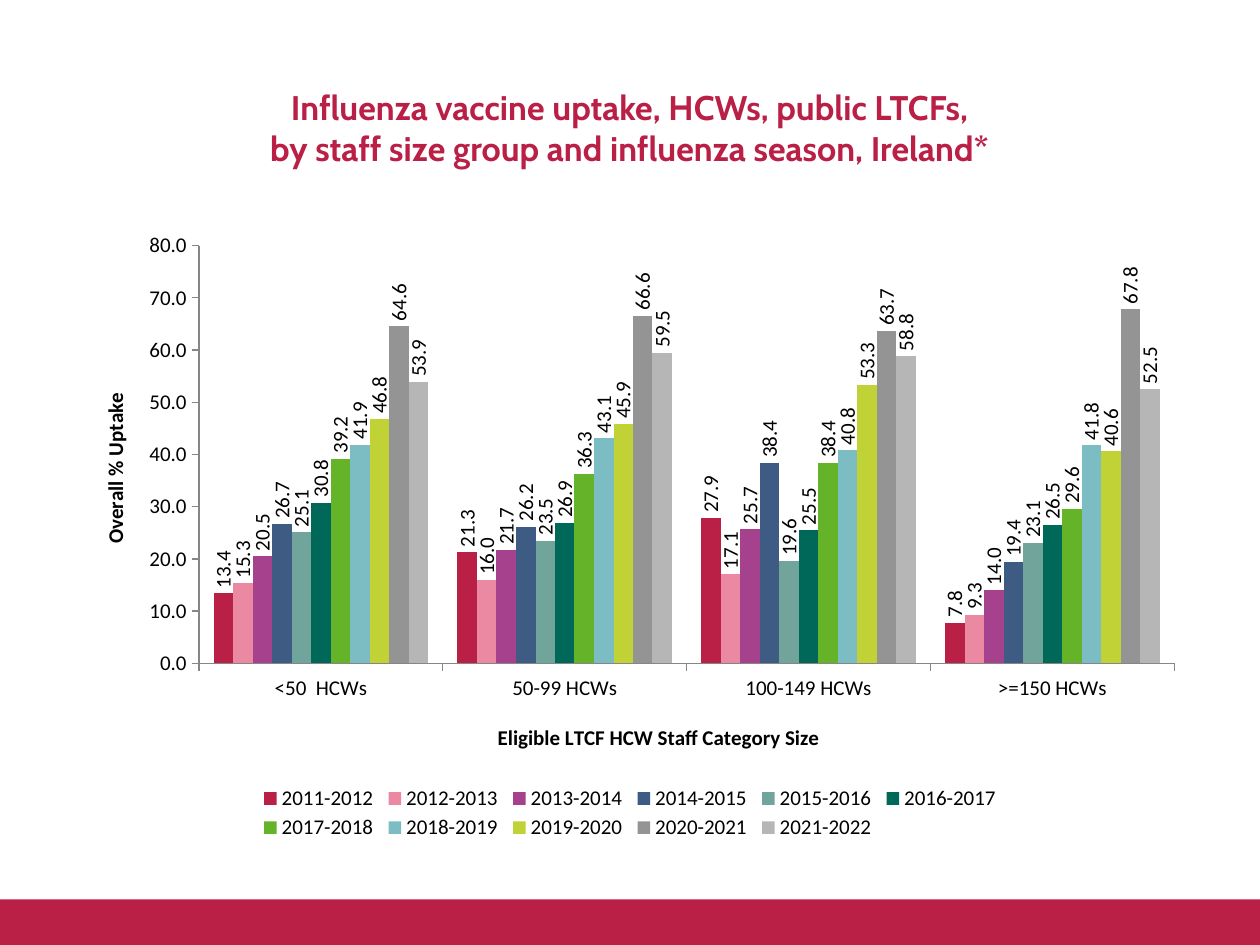
from lxml import etree
from pptx import Presentation
from pptx.chart.data import CategoryChartData
from pptx.dml.color import RGBColor
from pptx.enum.chart import XL_CHART_TYPE, XL_LABEL_POSITION, XL_LEGEND_POSITION, XL_TICK_MARK
from pptx.enum.shapes import MSO_SHAPE
from pptx.enum.text import MSO_ANCHOR, PP_ALIGN
from pptx.oxml.ns import qn
from pptx.util import Cm, Pt

COLUMNS = XL_CHART_TYPE.COLUMN_CLUSTERED
OUTSIDE_END = XL_LABEL_POSITION.OUTSIDE_END
BOTTOM = XL_LEGEND_POSITION.BOTTOM
TICK_OUT = XL_TICK_MARK.OUTSIDE
RECTANGLE = MSO_SHAPE.RECTANGLE
MIDDLE = MSO_ANCHOR.MIDDLE
CENTER = PP_ALIGN.CENTER

CRIMSON = RGBColor(0xBA, 0x1F, 0x46)
BLACK = RGBColor(0, 0, 0)
AXIS_GREY = RGBColor(0x86, 0x86, 0x86)

HEADLINE = [
    "Influenza vaccine uptake, HCWs, public LTCFs,",
    "by staff size group and influenza season, Ireland*",
]
STAFF_SIZES = ["<50  HCWs", "50-99 HCWs", "100-149 HCWs", ">=150 HCWs"]
SEASONS = [
    ("2011-2012", CRIMSON, (13.4, 21.3, 27.9, 7.8)),
    ("2012-2013", RGBColor(0xEB, 0x89, 0xA3), (15.3, 16.0, 17.1, 9.3)),
    ("2013-2014", RGBColor(0xA6, 0x42, 0x8D), (20.5, 21.7, 25.7, 14.0)),
    ("2014-2015", RGBColor(0x3E, 0x5B, 0x84), (26.7, 26.2, 38.4, 19.4)),
    ("2015-2016", RGBColor(0x71, 0xA5, 0x9C), (25.1, 23.5, 19.6, 23.1)),
    ("2016-2017", RGBColor(0x00, 0x68, 0x58), (30.8, 26.9, 25.5, 26.5)),
    ("2017-2018", RGBColor(0x65, 0xB3, 0x28), (39.2, 36.3, 38.4, 29.6)),
    ("2018-2019", RGBColor(0x7C, 0xBD, 0xC4), (41.9, 43.1, 40.8, 41.8)),
    ("2019-2020", RGBColor(0xC0, 0xD2, 0x36), (46.8, 45.9, 53.3, 40.6)),
    ("2020-2021", RGBColor(0x94, 0x94, 0x94), (64.6, 66.6, 63.7, 67.8)),
    ("2021-2022", RGBColor(0xB6, 0xB6, 0xB6), (53.9, 59.5, 58.8, 52.5)),
]


def write_text(frame, lines, font="Calibri", size=12, color=BLACK, bold=True):
    for index, line in enumerate(lines):
        paragraph = frame.add_paragraph() if index else frame.paragraphs[0]
        paragraph.alignment = CENTER
        run = paragraph.add_run()
        run.text = line
        run.font.name, run.font.size = font, Pt(size)
        run.font.bold, run.font.color.rgb = bold, color


def place(element, after, inner=False, **fractions):
    for old in element.findall(qn("c:layout")):
        element.remove(old)
    layout = etree.Element(qn("c:layout"))
    manual = etree.SubElement(layout, qn("c:manualLayout"))
    settings = {"layoutTarget": "inner"} if inner else {}
    settings.update(xMode="edge", yMode="edge", **fractions)
    for key, value in settings.items():
        etree.SubElement(manual, qn(f"c:{key}")).set("val", str(value))
    if after:
        element.find(qn(after)).addnext(layout)
    else:
        element.insert(0, layout)


def style_axis(axis, title, x, y):
    axis.has_major_gridlines = False
    axis.major_tick_mark = TICK_OUT
    axis.format.line.color.rgb = AXIS_GREY
    axis.format.line.width = Pt(0.75)
    write_text(axis.axis_title.text_frame, [title])
    place(axis.axis_title._element, "c:tx", x=x, y=y)


def add_uptake_chart(slide):
    data = CategoryChartData(number_format="0.0")
    data.categories = STAFF_SIZES
    for season, _, uptake in SEASONS:
        data.add_series(season, uptake)
    chart = slide.shapes.add_chart(
        COLUMNS, Cm(1.27), Cm(4.45), Cm(22.86), Cm(12.57), data).chart
    chart.has_title = False
    chart.font.name, chart.font.size, chart.font.color.rgb = "Calibri", Pt(12), BLACK

    columns = chart.plots[0]
    columns.gap_width, columns.overlap, columns.vary_by_categories = 150, 0, False
    for series, (_, color, _) in zip(columns.series, SEASONS):
        series.format.fill.solid()
        series.format.fill.fore_color.rgb = color
        labels = series.data_labels
        labels.show_value, labels.position = True, OUTSIDE_END
        labels.number_format, labels.number_format_is_linked = "0.0", False
        labels.font.name, labels.font.size, labels.font.color.rgb = "Calibri", Pt(12), BLACK
        direction = labels._element.find(qn("c:txPr")).find(qn("a:bodyPr"))
        direction.set("rot", "-5400000")
        direction.set("vert", "horz")

    uptake_axis = chart.value_axis
    uptake_axis.minimum_scale, uptake_axis.maximum_scale, uptake_axis.major_unit = 0, 80, 10
    uptake_axis.tick_labels.number_format = "0.0"
    uptake_axis.tick_labels.number_format_is_linked = False
    style_axis(chart.category_axis, "Eligible LTCF HCW Staff Category Size", 0.38, 0.8)
    style_axis(uptake_axis, "Overall % Uptake", 0.03, 0.27)
    direction = uptake_axis.axis_title.text_frame._txBody.find(qn("a:bodyPr"))
    direction.set("rot", "-5400000")
    direction.set("vert", "horz")

    chart.has_legend = True
    chart.legend.position = BOTTOM
    chart.legend.include_in_layout = False
    place(chart.legend._element, "c:legendPos", x=0.17, y=0.9, w=0.66, h=0.1)
    plot_area = chart._chartSpace.find(qn("c:chart")).find(qn("c:plotArea"))
    place(plot_area, None, inner=True, x=0.12, y=0.04, w=0.86, h=0.67)


def main():
    deck = Presentation()
    deck.slide_width, deck.slide_height = Cm(25.4), Cm(19.05)
    slide = deck.slides.add_slide(deck.slide_layouts[6])

    band_height = Cm(0.92)
    footer = slide.shapes.add_shape(
        RECTANGLE, 0, deck.slide_height - band_height, deck.slide_width, band_height)
    footer.shadow.inherit = False
    footer.fill.solid()
    footer.fill.fore_color.rgb = CRIMSON
    footer.line.fill.background()

    headline = slide.shapes.add_textbox(Cm(1.3), Cm(1.19), Cm(22.8), Cm(2.77)).text_frame
    headline.word_wrap = True
    headline.vertical_anchor = MIDDLE
    write_text(headline, HEADLINE, font="Cabin", size=19.5, color=CRIMSON)

    add_uptake_chart(slide)
    deck.save("out.pptx")


if __name__ == "__main__":
    main()
